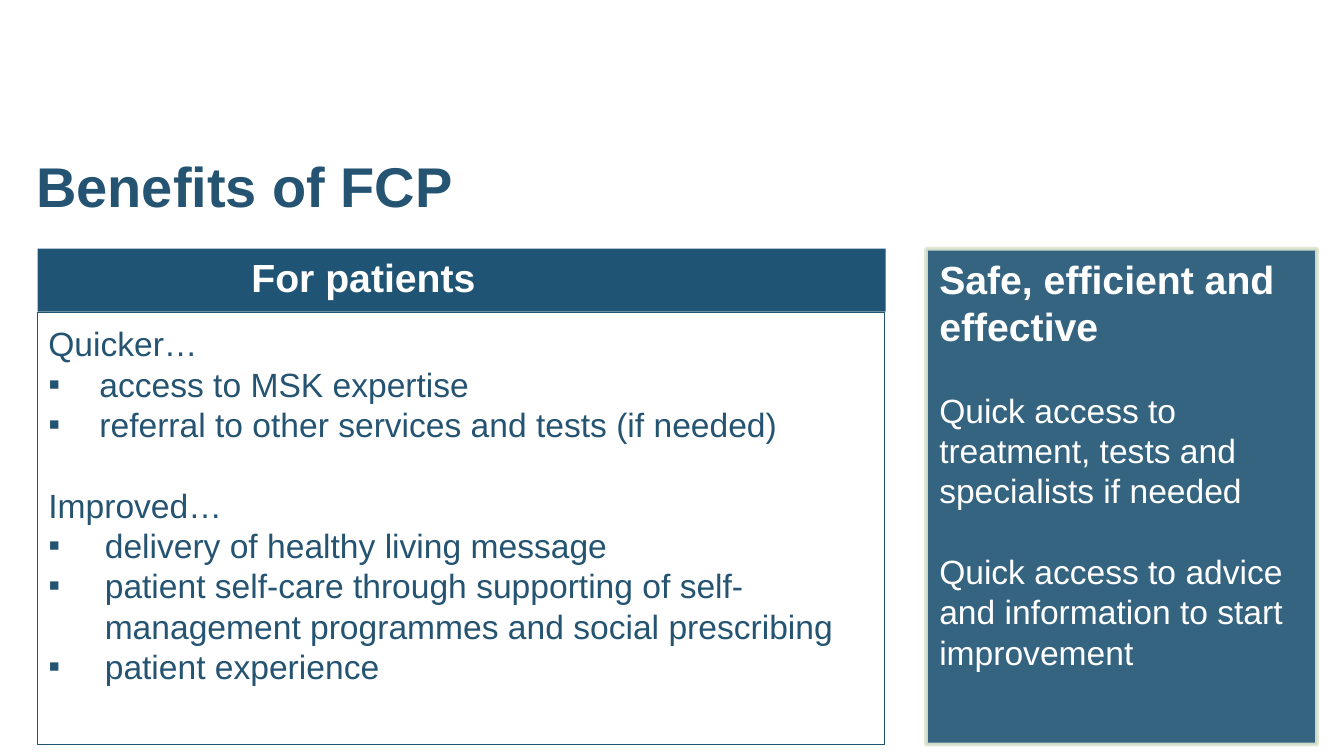
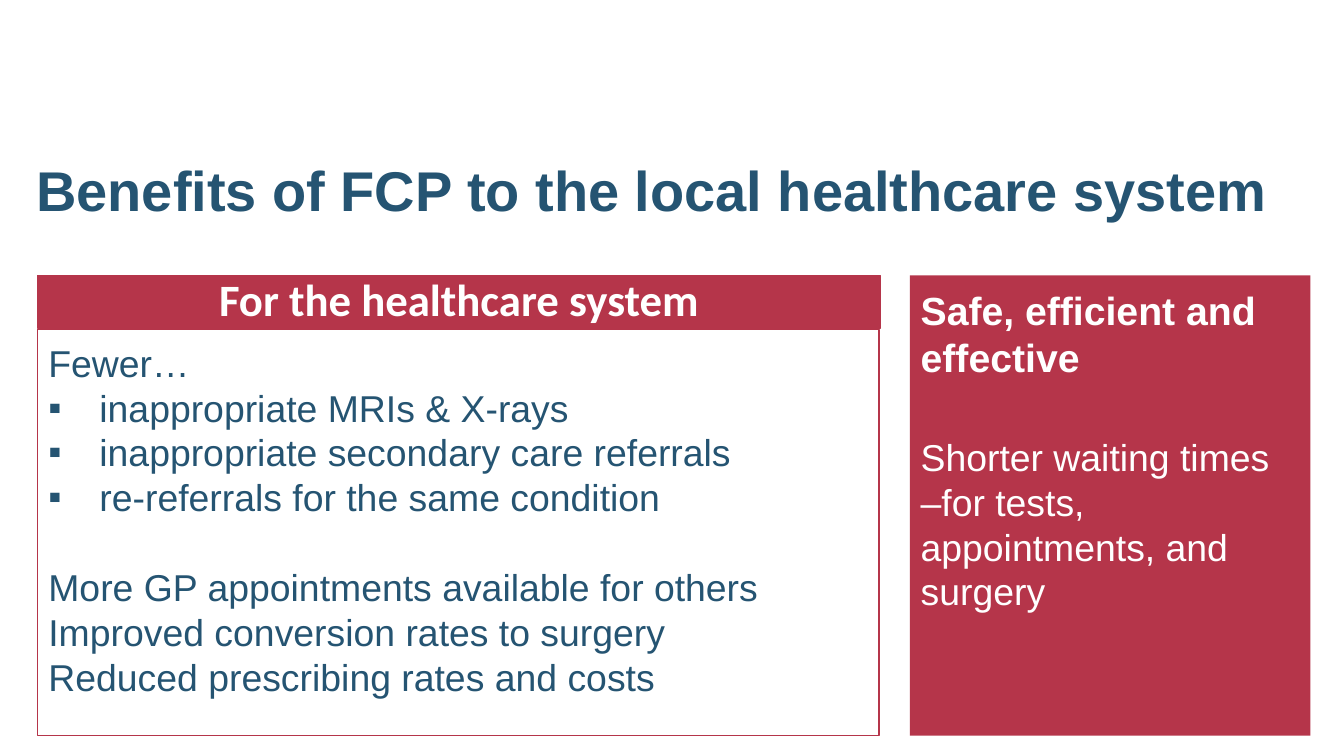
from lxml.etree import SubElement
from pptx import Presentation
from pptx.dml.color import RGBColor
from pptx.enum.shapes import MSO_SHAPE as Shape
from pptx.enum.text import MSO_ANCHOR as Anchor, MSO_AUTO_SIZE as AutoSize, PP_ALIGN as Align
from pptx.oxml.ns import qn
from pptx.util import Inches, Pt

GRID = 0.25  # one column or row, in inches: 40 columns by 22.5 rows
LEFT = 1.12
INK, NAVY, RED, WHITE, PALE = "255472", "205474", "B5354A", "FFFFFF", "DEE7D1"
PANEL_INSETS = (0.08, 0.08, 0.11, 0.12)
LINE_HEIGHT = 1.2


def rgb(code):
    return RGBColor.from_string(code)


class Deck:
    def __init__(self):
        self.prs = Presentation()
        self.prs.slide_width = Inches(40 * GRID)
        self.prs.slide_height = Inches(22.5 * GRID)
        self.slide = None

    def place(self, element, area):
        element.left, element.top, element.width, element.height = (
            Inches(cells * GRID) for cells in area)

    def frame(self, element, insets, anchor):
        text = element.text_frame
        text.word_wrap, text.auto_size = True, AutoSize.NONE
        text.vertical_anchor = anchor
        (text.margin_left, text.margin_top,
         text.margin_right, text.margin_bottom) = map(Inches, insets)
        return text

    def paint(self, element, fill, line=None, width=0.75):
        element.fill.solid()
        element.fill.fore_color.rgb = rgb(fill)
        if line:
            element.line.color.rgb = rgb(line)
            element.line.width = Pt(width)
        else:
            element.line.fill.background()

    def fill_paragraph(self, paragraph, words, size, color, bold=False, font="Arial",
                       align=Align.LEFT, gap=0, indent=0, bullet=None):
        """Set words and style; gap is the space before in points."""
        paragraph.text = words
        props = paragraph._p.get_or_add_pPr()
        props.set("marL", str(Inches(indent)))
        props.set("indent", str(-Inches(indent)))
        if bullet:
            SubElement(props, qn("a:buFont"), typeface="Arial")
            SubElement(props, qn("a:buChar"), char=bullet)
        else:
            SubElement(props, qn("a:buNone"))
        paragraph.alignment = align
        paragraph.space_before, paragraph.space_after = Pt(gap), Pt(0)
        for run in paragraph.runs:
            run.font.name, run.font.size, run.font.bold = font, Pt(size), bold
            run.font.color.rgb = rgb(color)

    def start(self, heading, top, width):
        self.slide = self.prs.slides.add_slide(self.prs.slide_layouts[1])
        title = self.slide.shapes.title
        self.place(title, (0.68, top, width, 4.36))
        text = self.frame(title, (0.1, 0.05, 0.1, 0.05), Anchor.MIDDLE)
        self.fill_paragraph(text.paragraphs[0], heading, 30, INK, bold=True)

    def rectangle(self, area):
        box = self.slide.shapes.add_shape(Shape.RECTANGLE, 0, 0, 0, 0)
        box.shadow.inherit = False
        self.place(box, area)
        return box

    def band(self, words, area, color, size, font="Arial", right=0.16, line=None):
        band = self.rectangle(area)
        self.paint(band, color, line)
        text = self.frame(band, (0.16, 0.09, right, 0.09), Anchor.MIDDLE)
        label = text.paragraphs[0]
        self.fill_paragraph(label, words, size, WHITE, True, font, Align.CENTER)
        label.line_spacing = 0.9

    def benefits(self, groups, area, color, size):
        """List of (bullet indent, lead, items); an indent of 0 means plain lines."""
        panel = self.slide.placeholders[1]
        self.place(panel, area)
        self.paint(panel, WHITE, color)
        text = self.frame(panel, PANEL_INSETS, Anchor.TOP)
        paragraph = text.paragraphs[0]
        for number, (indent, lead, items) in enumerate(groups):
            if number:
                paragraph = text.add_paragraph()
            self.fill_paragraph(paragraph, lead, size, INK,
                                gap=size * LINE_HEIGHT if number else 0)
            for item in items:
                self.fill_paragraph(text.add_paragraph(), item, size, INK,
                                    indent=indent, bullet="▪" if indent else None)

    def summary(self, points, area, color, size, gap, insets=PANEL_INSETS):
        panel = self.rectangle(area)
        self.paint(panel, color)
        text = self.frame(panel, insets, Anchor.TOP)
        self.fill_paragraph(text.paragraphs[0], "Safe, efficient and effective",
                            21, WHITE, True)
        for point in points:
            self.fill_paragraph(text.add_paragraph(), point, size, WHITE,
                                gap=gap * LINE_HEIGHT)
        return panel


def patients(deck):
    deck.start("Benefits of FCP", 3.32, 34.48)
    # The wide right inset moves the label left of centre
    deck.band("For patients", (LEFT, 7.4, 25.24, 1.88), NAVY, 21, right=1.62)
    deck.benefits([
        (0.38, "Quicker…", ["access to MSK expertise",
                            "referral to other services and tests (if needed)"]),
        (0.42, "Improved…", ["delivery of healthy living message",
                             "patient self-care through supporting of self-management "
                             "programmes and social prescribing",
                             "patient experience"]),
    ], (LEFT, 9.3, 25.2, 12.85), NAVY, 18)
    # Translucent side panel with a pale frame
    panel = deck.summary([
        "Quick access to treatment, tests and specialists if needed",
        "Quick access to advice and information to start improvement",
    ], (27.56, 7.4, 11.64, 14.76), NAVY, 18, 18, (0.1, 0.05, 0.1, 0.05))
    panel.line.color.rgb = rgb(PALE)
    panel.line.width = Pt(2)
    for solid in panel._element.spPr.iter(qn("a:solidFill")):
        SubElement(solid[0], qn("a:alpha"), val="90000")


def healthcare_system(deck):
    deck.start("Benefits of FCP to the local healthcare system", 3.44, 38.92)
    deck.benefits([
        (0.38, "Fewer…", ["inappropriate MRIs & X-rays",
                          "inappropriate secondary care referrals",
                          "re-referrals for the same condition"]),
        (0, "More GP appointments available for others Improved conversion rates to surgery",
         ["Reduced prescribing rates and costs"]),
    ], (LEFT, 9.8, 25.04, 12.1), RED, 20)
    deck.band("For the healthcare system", (LEFT, 8.2, 25.08, 1.56), RED, 24,
              font="Calibri", line=RED)
    deck.summary(["Shorter waiting times –for tests, appointments, and surgery"],
                 (27.08, 8.2, 11.92, 13.7), RED, 20, 24)


def main():
    deck = Deck()
    patients(deck)
    healthcare_system(deck)
    deck.prs.save("out.pptx")


if __name__ == "__main__":
    main()
